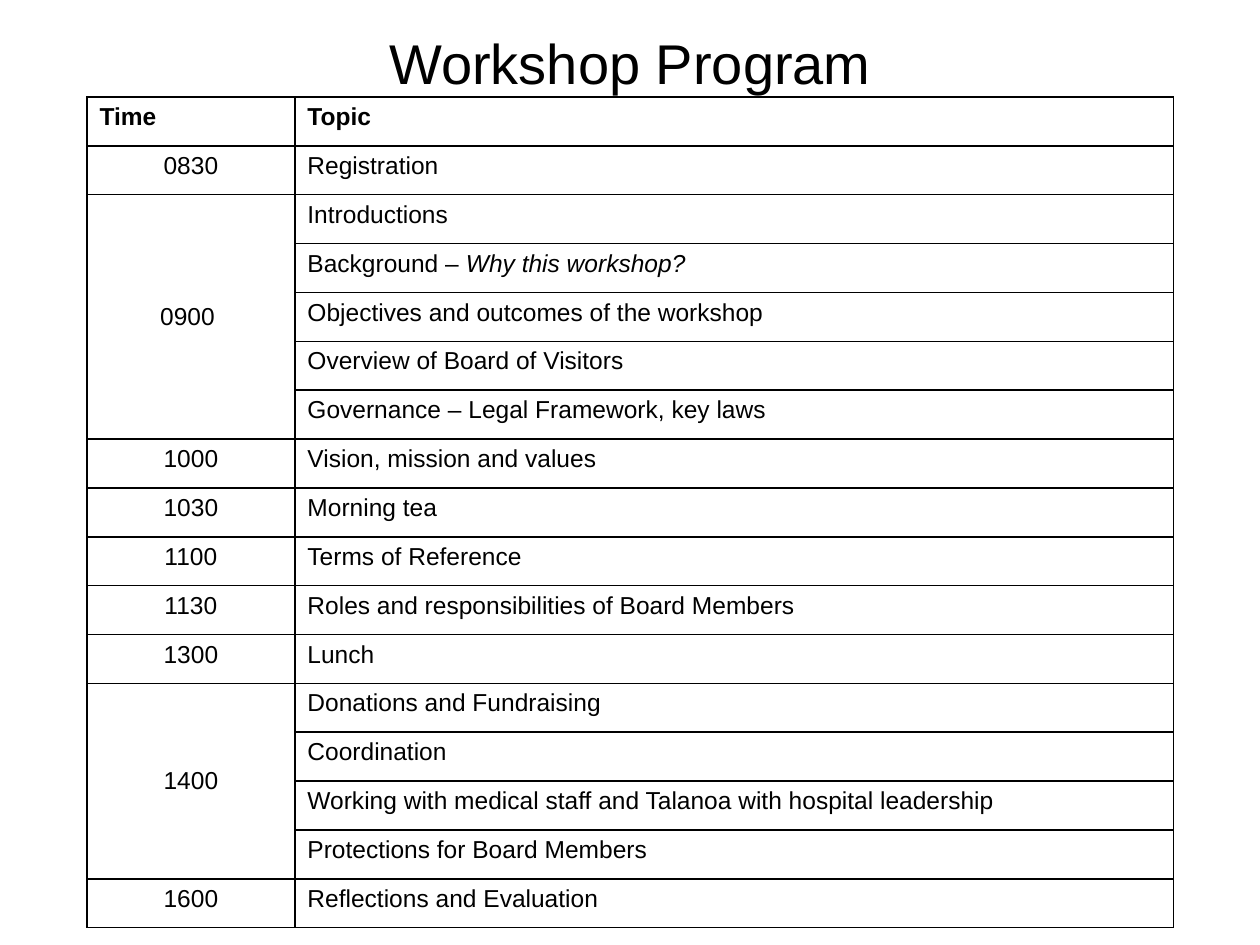
from dataclasses import dataclass

from lxml import etree
from pptx import Presentation
from pptx.dml.color import RGBColor
from pptx.enum import text
from pptx.oxml import ns
from pptx.util import Pt

BLACK = RGBColor(0, 0, 0)
WHITE = RGBColor(255, 255, 255)
FONT = "Arial"
LEFT, TABLE_TOP, WIDTH = 49.68, 55.44, 620.9
TIME_WIDTH = 118.8
ROW_HEIGHT = 27.93


@dataclass
class Session:
    time: str
    topics: list[str]


SESSIONS = [
    Session("0830", ["Registration"]),
    Session("0900 ", [
        "Introductions",
        "Background – ",
        "Objectives and outcomes of the workshop",
        "Overview of Board of Visitors",
        "Governance – Legal Framework, key laws",
    ]),
    Session("1000", ["Vision, mission and values"]),
    Session("1030", ["Morning tea"]),
    Session("1100", ["Terms of Reference"]),
    Session("1130", ["Roles and responsibilities of Board Members"]),
    Session("1300", ["Lunch"]),
    Session("1400", [
        "Donations and Fundraising",
        "Coordination",
        "Working with medical staff and Talanoa with hospital leadership",
        "Protections for Board Members",
    ]),
    Session("1600", ["Reflections and Evaluation"]),
]
ITALIC_ENDINGS = {"Background – ": "Why this workshop?"}


def format_run(run, size: float, bold: bool = False, italic: bool = False) -> None:
    run.font.name = FONT
    run.font.size = Pt(size)
    run.font.bold = bold
    run.font.italic = italic
    run.font.color.rgb = BLACK


def style_cell(cell) -> None:
    properties = cell._tc.get_or_add_tcPr()
    for side in ("lnL", "lnR", "lnT", "lnB"):
        line = etree.SubElement(properties, ns.qn(f"a:{side}"), w=str(Pt(1)))
        fill = etree.SubElement(line, ns.qn("a:solidFill"))
        etree.SubElement(fill, ns.qn("a:srgbClr"), val=str(BLACK))
    cell.fill.solid()
    cell.fill.fore_color.rgb = WHITE


def write_cell(cell, content: str, bold: bool = False, centered: bool = False) -> None:
    paragraph = cell.text_frame.paragraphs[0]
    paragraph.text = content
    paragraph.alignment = text.PP_ALIGN.CENTER if centered else text.PP_ALIGN.LEFT
    format_run(paragraph.runs[0], 14, bold)
    if content in ITALIC_ENDINGS:
        ending = paragraph.add_run()
        ending.text = ITALIC_ENDINGS[content]
        format_run(ending, 14, italic=True)


def add_title(slide, content: str) -> None:
    title = slide.shapes.title
    title.left, title.top = Pt(LEFT), Pt(10.08)
    title.width, title.height = Pt(WIDTH), Pt(55.44)
    title.text_frame.text = content
    title.text_frame.vertical_anchor = text.MSO_ANCHOR.MIDDLE
    paragraph = title.text_frame.paragraphs[0]
    paragraph.alignment = text.PP_ALIGN.CENTER
    paragraph.line_spacing = 0.9
    format_run(paragraph.runs[0], 32)


def add_program(slide, sessions: list[Session]) -> None:
    row_count = 1 + sum(len(session.topics) for session in sessions)
    table = slide.shapes.add_table(
        row_count, 2, Pt(LEFT), Pt(TABLE_TOP), Pt(WIDTH), Pt(ROW_HEIGHT * row_count)
    ).table
    table.first_row = False
    table.horz_banding = False
    table.columns[0].width = Pt(TIME_WIDTH)
    table.columns[1].width = Pt(WIDTH - TIME_WIDTH)
    for row in table.rows:
        row.height = Pt(ROW_HEIGHT)
    for cell in table.iter_cells():
        style_cell(cell)

    for column, heading in enumerate(("Time", "Topic")):
        write_cell(table.cell(0, column), heading, bold=True)
    first = 1
    for session in sessions:
        time_cell = table.cell(first, 0)
        write_cell(time_cell, session.time, centered=True)
        for offset, topic in enumerate(session.topics):
            write_cell(table.cell(first + offset, 1), topic)
        if len(session.topics) > 1:
            time_cell.merge(table.cell(first + len(session.topics) - 1, 0))
            time_cell.vertical_anchor = text.MSO_ANCHOR.MIDDLE
        first += len(session.topics)


def main() -> None:
    presentation = Presentation()
    presentation.slide_width, presentation.slide_height = Pt(720), Pt(540)
    slide = presentation.slides.add_slide(presentation.slide_layouts[5])
    add_title(slide, "Workshop Program")
    add_program(slide, SESSIONS)
    presentation.save("out.pptx")


if __name__ == "__main__":
    main()
